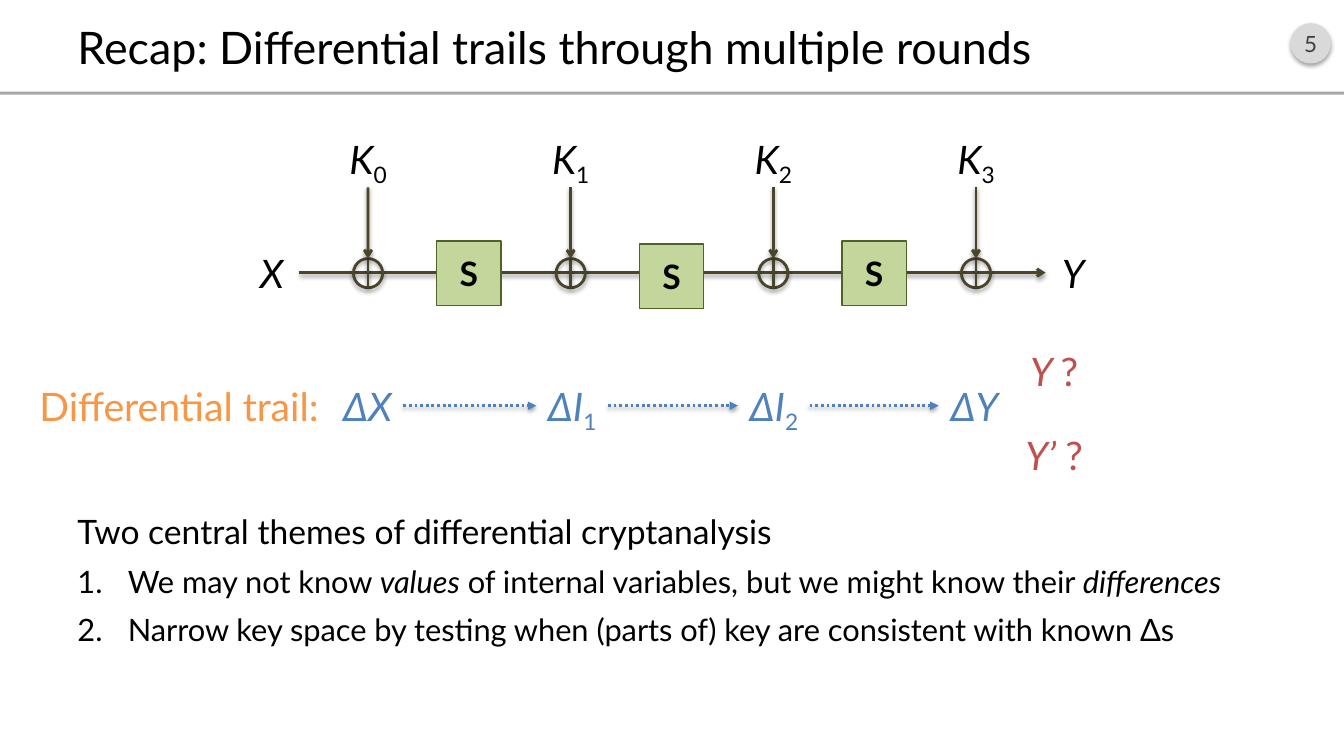
import pptx
import pptx.util
import pptx.dml.color
import pptx.enum.dml
import pptx.enum.shapes
import pptx.enum.text
import pptx.oxml.ns
import lxml.etree

Inches, Pt = pptx.util.Inches, pptx.util.Pt
SHAPE = pptx.enum.shapes.MSO_SHAPE
ALIGN = pptx.enum.text.PP_ALIGN
ANCHOR = pptx.enum.text.MSO_ANCHOR

# Content: a run is (text, style), with i = italic, b = bold, s = subscript
TITLE = "Recap: Differential trails through multiple rounds"
PAGE = "5"
KEYS = ["0", "1", "2", "3"]
SBOX_TOPS = [2.39, 2.42, 2.39]
TRAIL_LABEL = "Differential trail:"
TRAIL = [
    (3.29, [("ΔX", "i")]),
    (5.32, [("ΔI", "i"), ("1", "s")]),
    (7.32, [("ΔI", "i"), ("2", "s")]),
    (9.31, [("ΔY", "i")]),
]
QUESTIONS = [(3.4, "Y "), (4.23, "Y’ ")]
THEMES_HEAD = [("Two central themes of differential cryptanalysis", "")]
THEMES = [
    [("We may not know ", ""), ("values", "i"),
     (" of internal variables, but we might know their ", ""), ("differences", "i")],
    [("Narrow key space by testing when (parts of) key are consistent with known Δs", "")],
]
COLORS = {
    "text": "000000", "number": "404040", "badge": "D9D9D9", "rule": "A6A6A6",
    "wire": "4A452A", "sbox": "C3D69B", "sbox_line": "4F6228",
    "trail": "4F81BD", "label": "F79646", "question": "C0504D",
}
FONT = "Lato"

# Geometry of the cipher diagram and of the trail
XOR_X, ROUND_STEP, WIRE_Y, XOR_SIZE = 3.65, 2.01, 2.71, 0.29
SBOX_SIZE, SBOX_OFFSET = 0.64, 1.0
KEY_TOP, KEY_W, LABEL_W, LABEL_H = 1.29, 0.77, 0.55, 0.57
TRAIL_TOP, TRAIL_W = 3.74, 0.71

prs = pptx.Presentation()
prs.slide_width, prs.slide_height = Inches(13.33), Inches(7.5)
s = prs.slides.add_slide(prs.slide_layouts[6])


def rgb(name):
    return pptx.dml.color.RGBColor.from_string(COLORS[name])


def add_xml(parent, tag, **attrs):
    el = lxml.etree.SubElement(parent, pptx.oxml.ns.qn(tag))
    for key, value in attrs.items():
        el.set(key, str(value))
    return el


def add_shadow(effects, alpha, dist):
    shadow = add_xml(effects, "a:outerShdw", blurRad=Pt(3.1), dist=Pt(dist),
                     dir=90 * 60000, rotWithShape=0)
    add_xml(add_xml(shadow, "a:srgbClr", val="000000"), "a:alpha", val=alpha * 1000)


def write(sp, runs, size=28, color="text", align=ALIGN.CENTER, anchor=ANCHOR.TOP,
          side=0.1, edge=0.05, before=0, numbered=False, more=False):
    """Write one paragraph into sp; more=True adds it after the existing ones."""
    tf = sp.text_frame
    tf.word_wrap = True
    tf.vertical_anchor = anchor
    tf.margin_left = tf.margin_right = Inches(side)
    tf.margin_top = tf.margin_bottom = Inches(edge)
    p = tf.add_paragraph() if more else tf.paragraphs[0]
    p.alignment = align
    p.space_before = Pt(before)
    if numbered:
        pPr = p._p.get_or_add_pPr()
        pPr.set("marL", str(Inches(0.5)))
        pPr.set("indent", str(Inches(-0.5)))
        add_xml(pPr, "a:buFont", typeface="+mj-lt")
        add_xml(pPr, "a:buAutoNum", type="arabicPeriod")
    for text, style in runs:
        r = p.add_run()
        r.text = text
        r.font.name, r.font.size = FONT, Pt(size)
        r.font.color.rgb = rgb(color)
        r.font.italic, r.font.bold = "i" in style, "b" in style
        if "s" in style:
            r._r.get_or_add_rPr().set("baseline", "-25000")


def add_text(x, y, w, h, runs, **fmt):
    sp = s.shapes.add_textbox(Inches(x), Inches(y), Inches(w), Inches(h))
    write(sp, runs, **fmt)
    return sp


def add_shape(kind, x, y, w, h, fill=None, line=None, width=1, shadow=False):
    sp = s.shapes.add_shape(kind, Inches(x), Inches(y), Inches(w), Inches(h))
    if fill:
        sp.fill.solid()
        sp.fill.fore_color.rgb = rgb(fill)
    else:
        sp.fill.background()
    if line:
        sp.line.color.rgb = rgb(line)
        sp.line.width = Pt(width)
    else:
        sp.line.fill.background()
    sp.shadow.inherit = False
    if shadow:
        add_shadow(sp._element.spPr.find(pptx.oxml.ns.qn("a:effectLst")), 35, 1.8)
    return sp


def add_line(x1, y1, x2, y2, color="wire", head=None, dash=None, joins=None):
    """joins is (start shape, its side, end shape, its side)."""
    line = s.shapes.add_connector(pptx.enum.shapes.MSO_CONNECTOR.STRAIGHT,
                                  Inches(x1), Inches(y1), Inches(x2), Inches(y2))
    if joins:
        line.begin_connect(*joins[:2])
        line.end_connect(*joins[2:])
    line.line.color.rgb = rgb(color)
    line.line.width = Pt(2)
    if dash:
        line.line.dash_style = dash
    spPr = line._element.spPr
    if head:
        add_xml(spPr.find(pptx.oxml.ns.qn("a:ln")), "a:tailEnd", type=head)
    add_shadow(add_xml(spPr, "a:effectLst"), 38, 1.6)


# Header: page badge, rule, title
badge = add_shape(SHAPE.OVAL, 12.8, 0.23, 0.4, 0.4, fill="badge", shadow=True)
write(badge, [(PAGE, "")], size=16, color="number", anchor=ANCHOR.MIDDLE, side=0)
add_shape(SHAPE.RECTANGLE, 0, 0.91, 13.33, 0.03, fill="rule")
add_text(0.67, 0.16, 12, 0.6, [(TITLE, "")], size=32, align=ALIGN.LEFT,
         anchor=ANCHOR.MIDDLE)

# Central themes
themes = add_text(0.67, 5.02, 12, 1.94, THEMES_HEAD, size=24, align=ALIGN.LEFT, before=8)
for theme in THEMES:
    write(themes, theme, size=22, align=ALIGN.LEFT, before=8, numbered=True, more=True)

# Cipher: wire from X to Y
x_label, y_label = [add_text(x, 2.42, LABEL_W, LABEL_H, [(name, "i")])
                    for x, name in [(2.42, "X"), (10.37, "Y")]]
add_line(2.97, WIRE_Y, 10.37, WIRE_Y, head="arrow", joins=(x_label, 3, y_label, 1))

# Cipher: key additions
for i, index in enumerate(KEYS):
    x = XOR_X + i * ROUND_STEP
    top = WIRE_Y - XOR_SIZE / 2
    key = add_text(x - KEY_W / 2, KEY_TOP, KEY_W, LABEL_H, [("K", "i"), (index, "s")])
    xor = add_shape(SHAPE.OVAL, x - XOR_SIZE / 2, top, XOR_SIZE, XOR_SIZE,
                    line="wire", width=2, shadow=True)
    add_line(x, top, x, top + XOR_SIZE)
    add_line(x, KEY_TOP + LABEL_H, x, top, head="arrow", joins=(key, 2, xor, 0))

# Cipher: S-boxes between the key additions
for i, top in enumerate(SBOX_TOPS):
    x = XOR_X + i * ROUND_STEP + SBOX_OFFSET - SBOX_SIZE / 2
    sbox = add_shape(SHAPE.RECTANGLE, x, top, SBOX_SIZE, SBOX_SIZE,
                     fill="sbox", line="sbox_line")
    write(sbox, [("S", "b")], size=24, anchor=ANCHOR.MIDDLE, side=0, edge=0)

# Differential trail
add_text(0.19, TRAIL_TOP, 2.97, LABEL_H, [(TRAIL_LABEL, "")], color="label",
         align=ALIGN.RIGHT, side=0)
steps = [add_text(x, TRAIL_TOP, TRAIL_W, LABEL_H, runs, color="trail", side=0)
         for x, runs in TRAIL]
for start, end in zip(steps, steps[1:]):
    add_line(0, 0, 1, 0, color="trail", head="triangle",
             dash=pptx.enum.dml.MSO_LINE.ROUND_DOT, joins=(start, 3, end, 1))

# Unknown outputs
for top, name in QUESTIONS:
    add_text(10.1, top, TRAIL_W, LABEL_H, [(name, "i"), ("?", "")],
             color="question", side=0)

prs.save("out.pptx")
